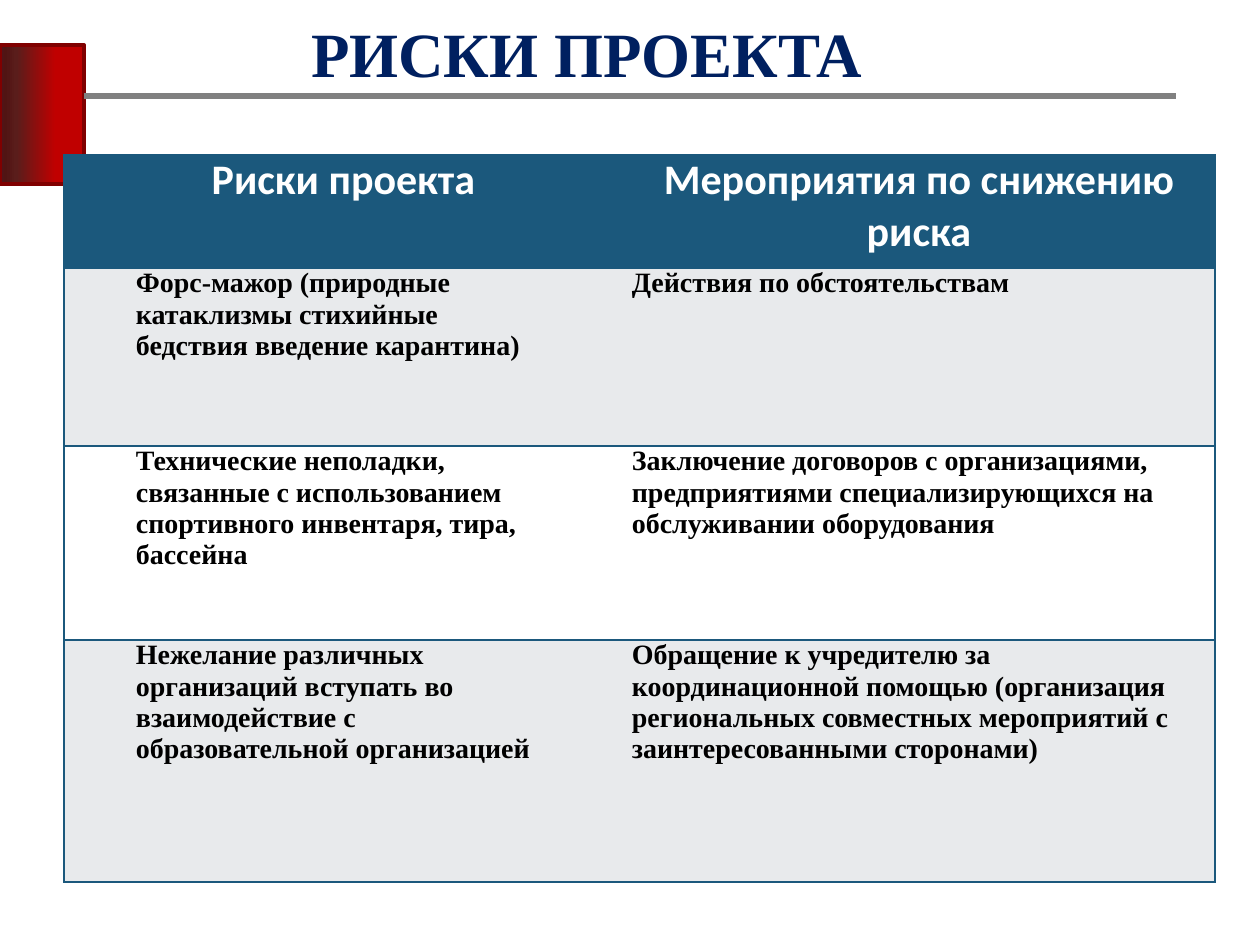
from lxml.etree import SubElement as Sub
from pptx import Presentation
from pptx.dml.color import RGBColor as RGB
from pptx.enum.shapes import MSO_CONNECTOR as CONN, MSO_SHAPE as SHAPE
from pptx.enum.text import MSO_ANCHOR as ANCHOR, PP_ALIGN as ALIGN
from pptx.oxml.ns import qn
from pptx.util import Pt

PX = 914400 // 126
SERIF, SANS = "Times New Roman", "Calibri"
BLUE, GREY, WHITE = "1B587C", "E8EAEC", "FFFFFF"
PLAIN = "{2D5ABB26-0587-4C30-8999-92F81FD0307C}"
STOPS = [(34, "C00000"), (80, "5A1D1B"), (94, "511413"), (100, "50141B")]
COLS = [496, 655]
ROWS = [113, 178, 194, 242]
RISKS = [
    ("Риски проекта", "Мероприятия по снижению риска"),
    ("Форс-мажор (природные катаклизмы стихийные бедствия введение карантина)",
     "Действия по обстоятельствам"),
    ("Технические неполадки, связанные с использованием спортивного инвентаря, тира, бассейна",
     "Заключение договоров с организациями, предприятиями специализирующихся "
     "на обслуживании оборудования"),
    ("Нежелание различных организаций вступать во взаимодействие с "
     "образовательной организацией",
     "Обращение к учредителю за координационной помощью (организация региональных "
     "совместных мероприятий с заинтересованными сторонами)"),
]


def px(*nums):
    """Turn pixel lengths into EMU."""
    return [n * PX for n in nums]


def paint(fmt, tone):
    """Give a fill one solid colour."""
    fmt.solid()
    fmt.fore_color.rgb = RGB.from_string(tone)


def write(para, text, font, size, tone, align):
    """Add one bold run to a paragraph."""
    para.alignment = align
    run = para.add_run()
    run.text = text
    run.font.name, run.font.size, run.font.bold = font, Pt(size), True
    run.font.color.rgb = RGB.from_string(tone)


def add_block(slide, x, y, w, h):
    """Draw the red gradient block at the left edge."""
    block = slide.shapes.add_shape(SHAPE.RECTANGLE, *px(x, y, w, h))
    block.shadow.inherit = False
    block.fill.gradient()
    block.fill.gradient_angle = 180
    stops = next(block.element.iter(qn("a:gsLst")))
    for stop in list(stops):
        stops.remove(stop)
    for pos, tone in STOPS:
        stop = Sub(stops, qn("a:gs"), pos=str(pos * 1000))
        Sub(stop, qn("a:srgbClr"), val=tone)
    paint(block.line.fill, "800000")
    block.line.width = Pt(2)


def add_rule(slide, x, y, w):
    """Draw the grey line under the title."""
    rule = slide.shapes.add_connector(CONN.STRAIGHT, *px(x, y, x + w, y))
    paint(rule.line.fill, "808080")
    rule.line.width = Pt(3)
    Sub(rule.element.spPr, qn("a:effectLst"))


def add_title(slide, x, y, w, h):
    """Place the slide title."""
    frame = slide.shapes.add_textbox(*px(x, y, w, h)).text_frame
    frame.word_wrap = True
    frame.vertical_anchor = ANCHOR.MIDDLE
    write(frame.paragraphs[0], "РИСКИ ПРОЕКТА", SERIF, 36, "002060", ALIGN.CENTER)


def edge(cell, sides):
    """Draw thin blue borders on the given sides of a cell."""
    props = cell._tc.get_or_add_tcPr()
    for side in "LRTB":
        line = Sub(props, qn(f"a:ln{side}"), w=str(Pt(1)))
        if side in sides:
            Sub(Sub(line, qn("a:solidFill")), qn("a:srgbClr"), val=BLUE)
        else:
            Sub(line, qn("a:noFill"))


def fill_cell(cell, text, row, col):
    """Style one table cell and add its text."""
    cell.margin_left = cell.margin_right = 9 * PX
    cell.margin_top = cell.margin_bottom = 0
    edge(cell, ("LTB", "RTB")[col])
    paint(cell.fill, BLUE if row == 0 else (WHITE, GREY)[row % 2])
    para = cell.text_frame.paragraphs[0]
    props = para._p.get_or_add_pPr()
    props.set("marL", str(63 * PX))
    props.set("indent", "0")
    if row == 0:
        write(para, text, SANS, 24, WHITE, ALIGN.CENTER)
    else:
        write(para, text, SERIF, 16, "000000", ALIGN.LEFT)


def add_risks(slide, x, y):
    """Build the table of risks and measures."""
    frame = slide.shapes.add_table(len(ROWS), len(COLS), *px(x, y, sum(COLS), sum(ROWS)))
    next(frame.element.iter(qn("a:tableStyleId"))).text = PLAIN
    table = frame.table
    for col, wide in zip(table.columns, COLS):
        col.width = wide * PX
    for row, high in zip(table.rows, ROWS):
        row.height = high * PX
    for r, texts in enumerate(RISKS):
        for c, text in enumerate(texts):
            fill_cell(table.cell(r, c), text, r, c)


def main():
    """Build the slide and save it."""
    deck = Presentation()
    deck.slide_width, deck.slide_height = px(1260, 945)
    slide = deck.slides.add_slide(deck.slide_layouts[6])
    add_block(slide, 0, 45, 84, 139)
    add_rule(slide, 84, 96, 1092)
    add_title(slide, 184, 8, 806, 89)
    add_risks(slide, 64, 155)
    deck.save("out.pptx")


if __name__ == "__main__":
    main()
